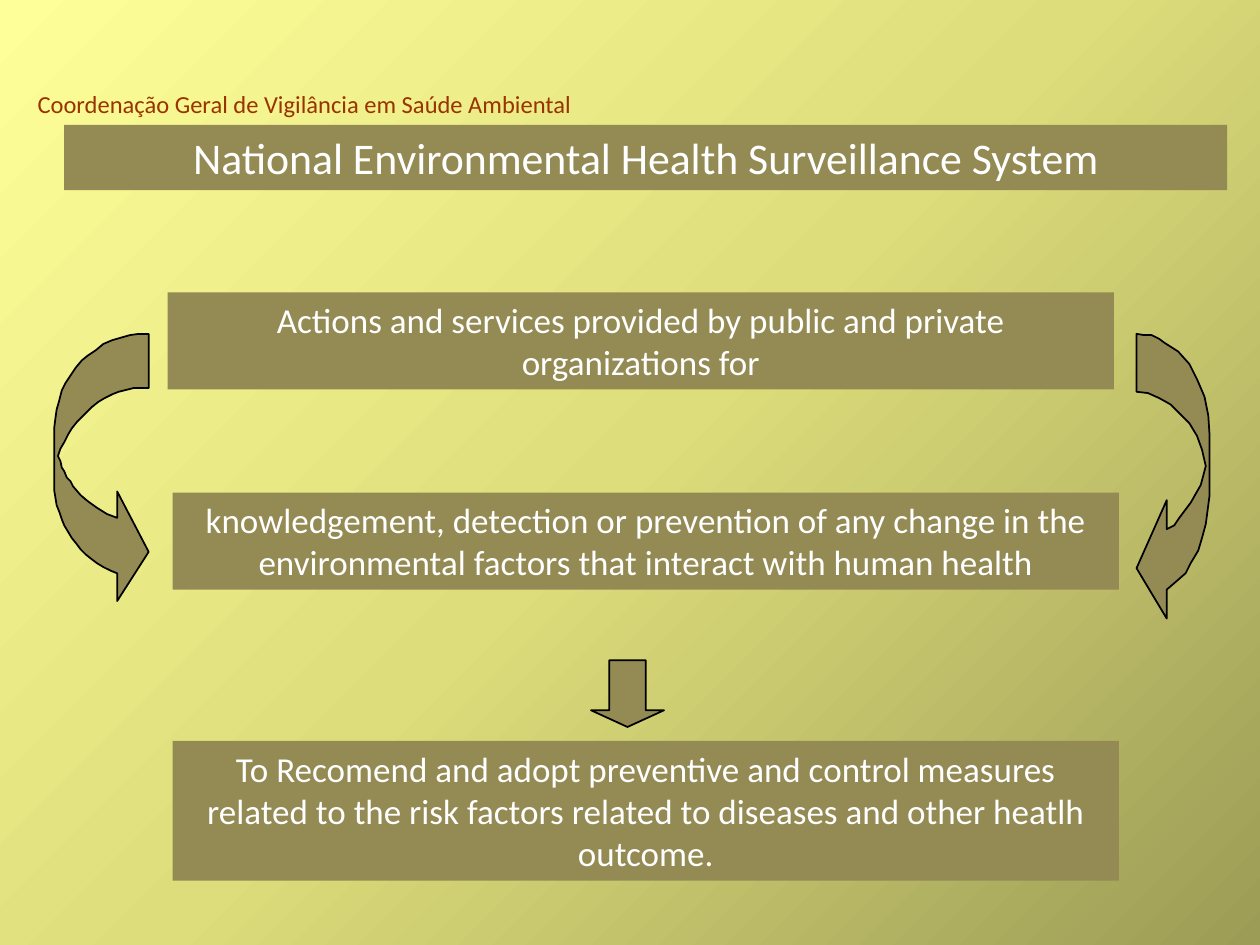
"""Build the National Environmental Health Surveillance System slide."""
import copy

import pptx
import pptx.dml.color
import pptx.enum.shapes
import pptx.enum.text
import pptx.oxml.ns
import pptx.util

Inches = pptx.util.Inches
Pt = pptx.util.Pt
RGB = pptx.dml.color.RGBColor.from_string
Preset = pptx.enum.shapes.MSO_SHAPE
Align = pptx.enum.text.PP_ALIGN

COLORS = {
    "olive": "948A54",
    "white": "FFFFFF",
    "outline": "000000",
    "rust": "993300",
}
GRADIENT = [(0, "9C9C56"), (0.5, "DDDD7B"), (1, "FFFF99")]
FRAME_FORMAT = {
    "word_wrap": True,
    "auto_size": pptx.enum.text.MSO_AUTO_SIZE.NONE,
    "vertical_anchor": pptx.enum.text.MSO_ANCHOR.TOP,
    "margin_left": Inches(0.1),
    "margin_right": Inches(0.1),
    "margin_top": Inches(0.05),
    "margin_bottom": Inches(0.05),
}

STATEMENTS = [
    (1.33, 2.32, 0.77,
     "Actions and services provided by public and private organizations for"),
    (1.37, 3.91, 0.77,
     "knowledgement, detection or prevention of any change in the "
     "environmental factors that interact with human health"),
    (1.37, 5.88, 1.11,
     "To Recomend and adopt preventive and control measures related to the "
     "risk factors related to diseases and other heatlh outcome."),
]

LEFT_ARROW = [
    (1.18, 2.65), (1.1, 2.65), (1.03, 2.66), (0.96, 2.68), (0.89, 2.7),
    (0.82, 2.73), (0.76, 2.78), (0.7, 2.82), (0.65, 2.86), (0.6, 2.92),
    (0.56, 2.98), (0.52, 3.04), (0.49, 3.1), (0.47, 3.18), (0.45, 3.25),
    (0.44, 3.32), (0.43, 3.4), (0.43, 3.83), (0.43, 3.89), (0.44, 3.95),
    (0.45, 4.01), (0.47, 4.06), (0.49, 4.12), (0.51, 4.17), (0.54, 4.22),
    (0.57, 4.27), (0.61, 4.32), (0.64, 4.36), (0.68, 4.4), (0.73, 4.44),
    (0.77, 4.47), (0.82, 4.5), (0.88, 4.53), (0.93, 4.55), (0.93, 4.77),
    (1.18, 4.38), (0.93, 3.9), (0.93, 4.11), (0.85, 4.08), (0.77, 4.03),
    (0.7, 3.98), (0.64, 3.93), (0.58, 3.86), (0.56, 3.82), (0.53, 3.79),
    (0.51, 3.74), (0.49, 3.71), (0.48, 3.66), (0.46, 3.62), (0.48, 3.56),
    (0.51, 3.51), (0.54, 3.45), (0.57, 3.4), (0.61, 3.35), (0.65, 3.31),
    (0.69, 3.27), (0.73, 3.23), (0.78, 3.19), (0.83, 3.16), (0.89, 3.13),
    (0.94, 3.11), (1.06, 3.08), (1.18, 3.08),
]
RIGHT_ARROW = [
    (9.02, 2.65), (9.08, 2.66), (9.14, 2.66), (9.2, 2.69), (9.24, 2.72),
    (9.35, 2.79), (9.44, 2.89), (9.5, 3.01), (9.56, 3.15), (9.59, 3.3),
    (9.6, 3.46), (9.6, 3.93), (9.57, 4.16), (9.54, 4.27), (9.51, 4.37),
    (9.45, 4.47), (9.41, 4.55), (9.33, 4.62), (9.26, 4.68), (9.26, 4.91),
    (9.02, 4.51), (9.26, 3.97), (9.26, 4.2), (9.32, 4.17), (9.36, 4.11),
    (9.45, 3.99), (9.53, 3.85), (9.57, 3.7), (9.54, 3.57), (9.5, 3.46),
    (9.44, 3.36), (9.36, 3.28), (9.29, 3.21), (9.2, 3.16), (9.11, 3.12),
    (9.02, 3.11),
]


class SlideBuilder:
    """Hold the style and the current slide."""

    def __init__(self, slide, font="Calibri"):
        self.slide = slide
        self.font = font

    def background(self, stops):
        """Fill the background with a diagonal gradient."""
        fill = self.slide.background.fill
        fill.gradient()
        fill.gradient_angle = 135
        stop_list = self.slide.element.find(".//" + pptx.oxml.ns.qn("a:gsLst"))
        stop_list.insert(1, copy.deepcopy(stop_list[0]))
        for stop, (position, color) in zip(fill.gradient_stops, stops):
            stop.position = position
            stop.color.rgb = RGB(color)

    def set_text(self, holder, text, size, color, align):
        """Put one formatted paragraph into a shape."""
        frame = holder.text_frame
        for name, value in FRAME_FORMAT.items():
            setattr(frame, name, value)
        paragraph = frame.paragraphs[0]
        paragraph.text = text
        paragraph.alignment = align
        paragraph.line_spacing = 1.0
        paragraph.space_before = Pt(0)
        font_format = {"name": self.font, "size": Pt(size), "bold": False}
        for name, value in font_format.items():
            setattr(paragraph.runs[0].font, name, value)
        paragraph.runs[0].font.color.rgb = RGB(COLORS[color])

    def paint(self, shape, outlined):
        """Give a shape the olive fill and an optional outline."""
        shape.shadow.inherit = False
        shape.fill.solid()
        shape.fill.fore_color.rgb = RGB(COLORS["olive"])
        if outlined:
            shape.line.color.rgb = RGB(COLORS["outline"])
            shape.line.width = Pt(1)
        else:
            shape.line.fill.background()

    def title(self, text, left, top, width, height):
        """Place the title as an olive banner."""
        banner = self.slide.shapes.title
        box = {"left": left, "top": top, "width": width, "height": height}
        for name, value in box.items():
            setattr(banner, name, Inches(value))
        banner.fill.solid()
        banner.fill.fore_color.rgb = RGB(COLORS["olive"])
        self.set_text(banner, text, 25, "white", Align.CENTER)

    def statement(self, text, *box):
        """Add an olive panel with centred text."""
        panel = self.slide.shapes.add_shape(
            Preset.RECTANGLE, *map(Inches, box))
        self.paint(panel, outlined=False)
        self.set_text(panel, text, 20, "white", Align.CENTER)

    def label(self, text, *box):
        """Add a plain line of text."""
        caption = self.slide.shapes.add_textbox(*map(Inches, box))
        self.set_text(caption, text, 14, "rust", Align.LEFT)

    def curved_arrow(self, points):
        """Add a closed arrow outline."""
        outline = [(Inches(x), Inches(y)) for x, y in points]
        builder = self.slide.shapes.build_freeform(*outline[0])
        builder.add_line_segments(outline[1:], close=True)
        self.paint(builder.convert_to_shape(), outlined=True)

    def down_arrow(self, *box):
        """Add a short block arrow pointing down."""
        arrow = self.slide.shapes.add_shape(
            Preset.DOWN_ARROW, *map(Inches, box))
        arrow.adjustments[0] = 0.5
        arrow.adjustments[1] = 0.25
        self.paint(arrow, outlined=True)


def main():
    """Build and save the slide."""
    deck = pptx.Presentation()
    deck.slide_width = Inches(10)
    deck.slide_height = Inches(7.5)
    builder = SlideBuilder(deck.slides.add_slide(deck.slide_layouts[5]))
    builder.background(GRADIENT)
    builder.title("National Environmental Health Surveillance System",
                  0.51, 0.99, 9.23, 0.52)
    for left, top, height, text in STATEMENTS:
        builder.statement(text, left, top, 7.51, height)
    for outline in (LEFT_ARROW, RIGHT_ARROW):
        builder.curved_arrow(outline)
    builder.down_arrow(4.69, 5.24, 0.58, 0.53)
    builder.label("Coordenação Geral de Vigilância em Saúde Ambiental",
                  0.2, 0.66, 6, 0.33)
    deck.save("out.pptx")


if __name__ == "__main__":
    main()
